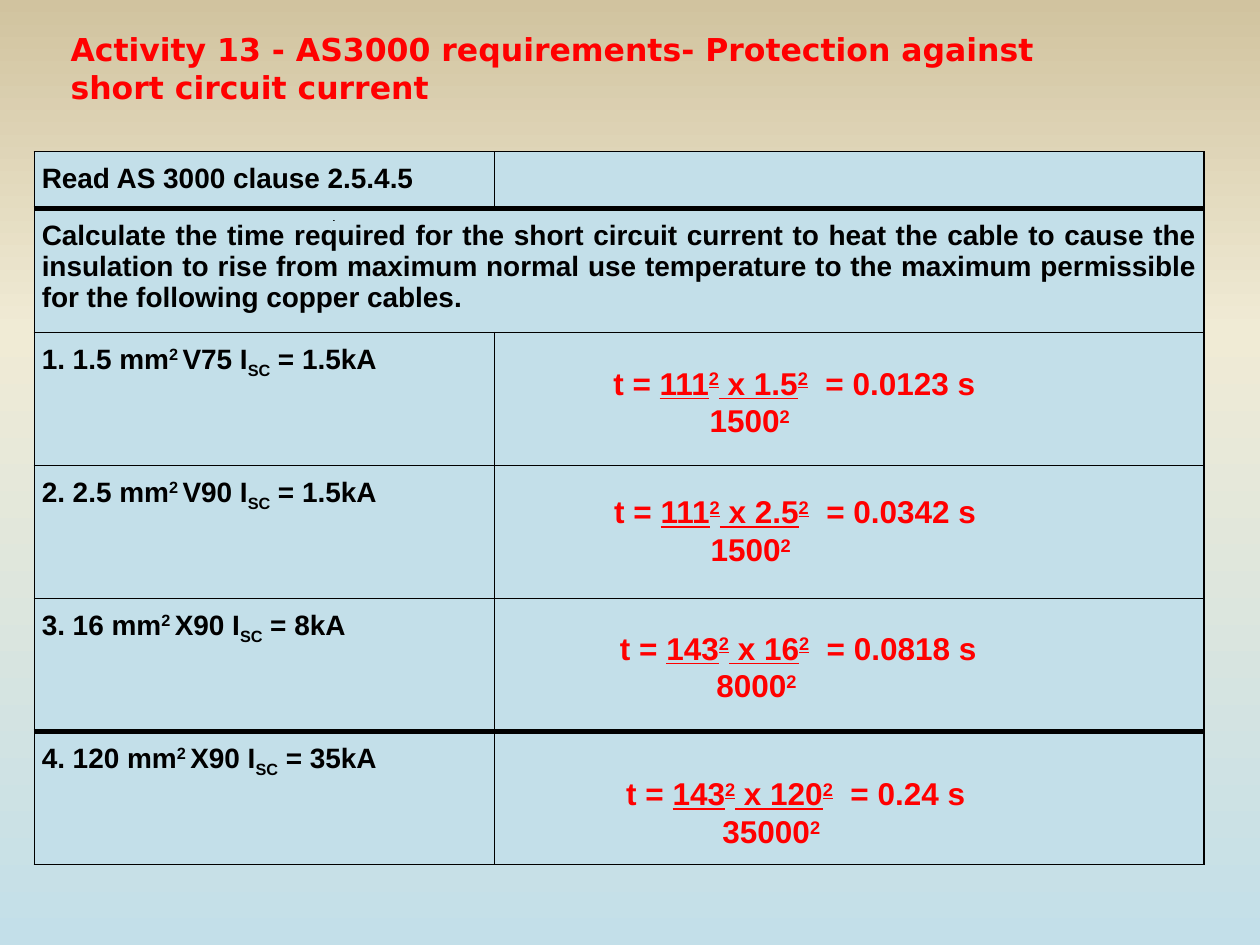
"""Build the short circuit protection activity slide."""
import copy
import pptx
import pptx.dml.color
import pptx.enum.shapes
import pptx.enum.text
import pptx.oxml
import pptx.oxml.ns
import pptx.util

Pt = pptx.util.Pt
RGB = pptx.dml.color.RGBColor.from_string
ALIGN = pptx.enum.text.PP_ALIGN
ANCHOR = pptx.enum.text.MSO_ANCHOR

THEME = {
    "sky": [(0, "C3DFE9"), (0.65, "F0EBD5"), (1, "D1C39F")],
    "cell": "C3DFE9", "line": "000000", "thin": 1, "thick": 3, "dot": 0.75,
    "title": {"name": "DejaVu Sans", "size": Pt(18), "bold": True, "color": "FF0000"},
    "task": {"name": "Arial", "size": Pt(16), "bold": True, "color": "000000"},
    "sum": {"name": "Arial", "size": Pt(18), "bold": True, "color": "FF0000"},
}
UP, DOWN = 30000, -25000

TITLE = "Activity 13 - AS3000 requirements- Protection against short circuit current"
INTRO = [
    "Read AS 3000 clause 2.5.4.5",
    "Calculate the time required for the short circuit current to heat the cable "
    "to cause the insulation to rise from maximum normal use temperature to the "
    "maximum permissible for the following copper cables.",
]
CABLES = [
    {"size": "1.5", "type": "V75", "fault": "1.5kA", "k": "111", "amps": "1500",
     "time": "0.0123 s", "at": (338.4, 204.2)},
    {"size": "2.5", "type": "V90", "fault": "1.5kA", "k": "111", "amps": "1500",
     "time": "0.0342 s", "at": (338.9, 277.8)},
    {"size": "16", "type": "X90", "fault": "8kA", "k": "143", "amps": "8000",
     "time": "0.0818 s", "at": (342.2, 355.6)},
    {"size": "120", "type": "X90", "fault": "35kA", "k": "143", "amps": "35000",
     "time": "0.24 s", "at": (345.7, 438.9)},
]
COLS = [263, 405.5]
ROWS = [32.6, 70.8] + [76] * len(CABLES)
THICK = {(0, "B"), (1, "T"), (4, "B"), (5, "T")}


def put(item, vals):
    for name, val in vals.items():
        setattr(item, name, val)


def write(para, parts, style, left=0, hang=0):
    props = para._p.get_or_add_pPr()
    props.set("marL", str(Pt(left)))
    props.set("indent", str(Pt(-hang)))
    for text, base, under in parts:
        run = para.add_run()
        run.text = text
        put(run.font, {k: v for k, v in THEME[style].items() if k != "color"})
        run.font.color.rgb = RGB(THEME[style]["color"])
        if under:
            run.font.underline = True
        if base:
            run._r.get_or_add_rPr().set("baseline", str(base))


def edge(cell, row):
    props = cell._tc.get_or_add_tcPr()
    for spot, side in enumerate("LRTB"):
        width = THEME["thick" if (row, side) in THICK else "thin"]
        props.insert(spot, pptx.oxml.parse_xml(
            f'<a:ln{side} {pptx.oxml.ns.nsdecls("a")} w="{Pt(width)}"><a:solidFill>'
            f'<a:srgbClr val="{THEME["line"]}"/></a:solidFill></a:ln{side}>'))


def tint(fill):
    fill.solid()
    fill.fore_color.rgb = RGB(THEME["cell"])


def paint(slide):
    fill = slide.background.fill
    fill.gradient()
    fill.gradient_angle = 90
    stops = slide._element.xpath(".//a:gsLst")[0]
    stops.append(copy.deepcopy(stops[0]))
    for stop, (place, color) in zip(fill.gradient_stops, THEME["sky"]):
        stop.color.rgb = RGB(color)
        stop.position = place


def head(slide):
    title = slide.shapes.title
    put(title, {"left": Pt(33.1), "top": Pt(13.7), "width": Pt(624), "height": Pt(72.7)})
    put(title.text_frame, {"word_wrap": True, "vertical_anchor": ANCHOR.TOP,
                           "auto_size": pptx.enum.text.MSO_AUTO_SIZE.NONE})
    para = title.text_frame.paragraphs[0]
    para.alignment = ALIGN.LEFT
    write(para, [(TITLE, 0, False)], "title")


def grid(slide):
    table = slide.shapes.add_table(len(ROWS), len(COLS), Pt(19.6), Pt(86.7),
                                   Pt(sum(COLS)), Pt(sum(ROWS))).table
    put(table, {"first_row": False, "horz_banding": False})
    for col, width in zip(table.columns, COLS):
        col.width = Pt(width)
    for row, high in zip(table.rows, ROWS):
        row.height = Pt(high)
    table.cell(1, 0).merge(table.cell(1, 1))
    tasks = [[(text, 0, False)] for text in INTRO]
    for num, cable in enumerate(CABLES, 1):
        tasks.append([(f"{num}. {cable['size']} mm", 0, False), ("2 ", UP, False),
                      (f"{cable['type']} I", 0, False), ("SC", DOWN, False),
                      (f" = {cable['fault']}", 0, False)])
    for row, parts in enumerate(tasks):
        for col in range(len(COLS)):
            cell = table.cell(row, col)
            tint(cell.fill)
            edge(cell, row)
        cell = table.cell(row, 0)
        put(cell, {"margin_left": Pt(4.3), "margin_right": Pt(4.3),
                   "margin_top": Pt(6.6), "margin_bottom": Pt(6.5)})
        para = cell.text_frame.paragraphs[0]
        intro = row < len(INTRO)
        put(para, {"space_before": Pt(6),
                   "alignment": ALIGN.JUSTIFY if intro else ALIGN.LEFT})
        dent = 0 if intro else 15
        write(para, parts, "task", dent, dent)


def speck(slide):
    dot = slide.shapes.add_shape(pptx.enum.shapes.MSO_SHAPE.RECTANGLE,
                                 Pt(190.8), Pt(126), Pt(0), Pt(0))
    dot.shadow.inherit = False
    tint(dot.fill)
    dot.line.color.rgb = RGB(THEME["line"])
    dot.line.width = Pt(THEME["dot"])


def solve(slide, cable):
    left, top = cable["at"]
    frame = slide.shapes.add_textbox(Pt(left), Pt(top), Pt(286), Pt(51)).text_frame
    frame.word_wrap = True
    ratio = [("t = ", 0, False), (cable["k"], 0, True), ("2", UP, True),
             (f" x {cable['size']}", 0, True), ("2", UP, True),
             (f"  = {cable['time']}", 0, False)]
    below = [(cable["amps"], 0, False), ("2", UP, False)]
    for para, parts, dent in ((frame.paragraphs[0], ratio, 5),
                              (frame.add_paragraph(), below, 60)):
        para.alignment = ALIGN.JUSTIFY
        write(para, parts, "sum", dent)


def main():
    deck = pptx.Presentation()
    put(deck, {"slide_width": Pt(720), "slide_height": Pt(540)})
    slide = deck.slides.add_slide(deck.slide_layouts[5])
    paint(slide)
    head(slide)
    grid(slide)
    speck(slide)
    for cable in CABLES:
        solve(slide, cable)
    deck.save("out.pptx")


if __name__ == "__main__":
    main()
